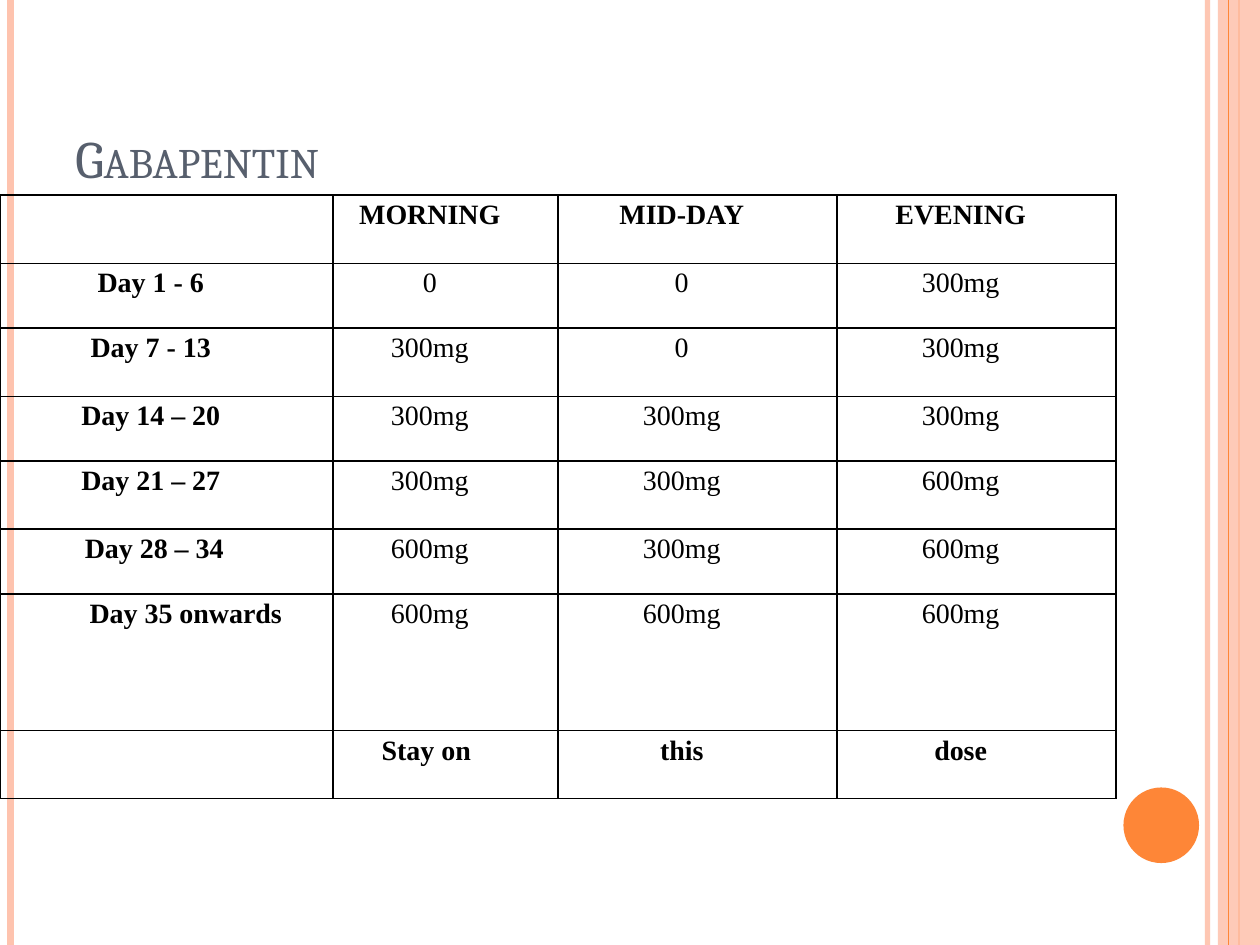
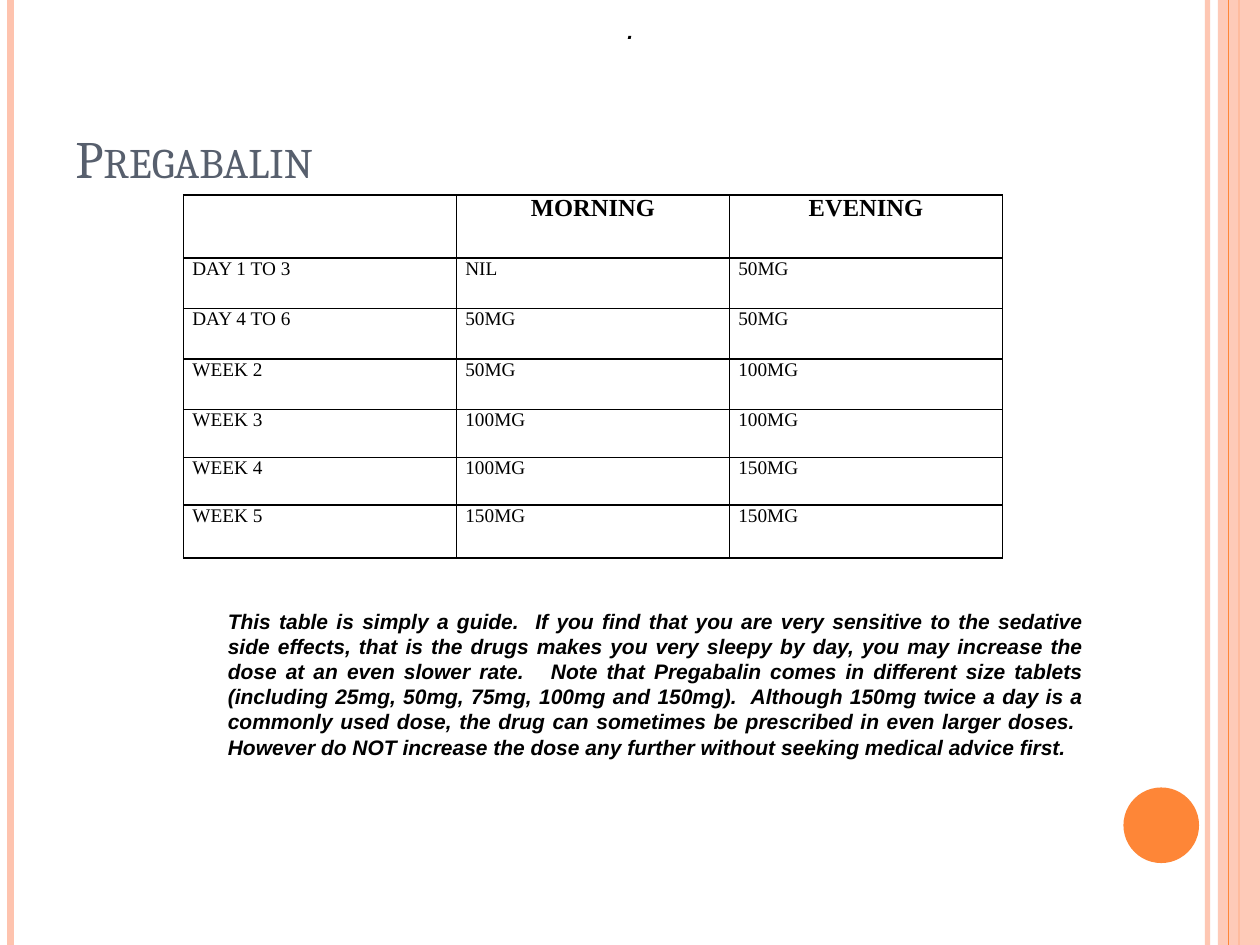
from dataclasses import dataclass

from lxml import etree
from pptx import Presentation
from pptx.dml.color import RGBColor
from pptx.enum import shapes, text
from pptx.oxml import ns
from pptx.util import Pt


@dataclass(frozen=True)
class Theme:
    ink: str = "000000"
    title: str = "575F6D"
    accent: str = "FE8637"
    tint: str = "FEC3AE"
    title_font: str = "Cambria"
    table_font: str = "Times New Roman"
    note_font: str = "Arial"
    title_size: float = 30
    dose_size: float = 16
    head_size: float = 14
    body_size: float = 11
    note_size: float = 12


WIDTH, HEIGHT = 720, 540
TABLE_TOP = 111.5
CENTER, JUSTIFY, LEFT = text.PP_ALIGN.CENTER, text.PP_ALIGN.JUSTIFY, text.PP_ALIGN.LEFT

GABAPENTIN = [
    ["", "MORNING", "MID-DAY", "EVENING"],
    ["Day 1 - 6", "0", "0", "300mg"],
    ["Day 7 - 13", "300mg", "0", "300mg"],
    ["Day 14 – 20", "300mg", "300mg", "300mg"],
    ["Day 21 – 27", "300mg", "300mg", "600mg"],
    [" Day 28 – 34", "600mg", "300mg", "600mg"],
    ["Day 35 onwards", "600mg", "600mg", "600mg"],
    ["", "Stay on ", "this", "dose"],
]
PREGABALIN = [
    ["", "MORNING", "EVENING"],
    ["DAY 1 TO 3", "NIL", "50MG"],
    ["DAY 4 TO 6", "50MG", "50MG"],
    ["WEEK 2", "50MG", "100MG"],
    ["WEEK 3", "100MG", "100MG"],
    ["WEEK 4", "100MG", "150MG"],
    ["WEEK 5", "150MG", "150MG"],
]
NOTE = (
    "This table is simply a guide.  If you find that you are very sensitive to the "
    "sedative side effects, that is the drugs makes you very sleepy by day, you may "
    "increase the dose at an even slower rate.   Note that Pregabalin comes in "
    "different size tablets (including 25mg, 50mg, 75mg, 100mg and 150mg).  Although "
    "150mg twice a day is a commonly used dose, the drug can sometimes be prescribed "
    "in even larger doses.  However do NOT increase the dose any further without "
    "seeking medical advice first."
)


class Deck:
    def __init__(self, theme):
        self.theme = theme
        self.prs = Presentation()
        self.prs.slide_width, self.prs.slide_height = Pt(WIDTH), Pt(HEIGHT)
        self.slide = None

    def add_slide(self, title):
        t = self.theme
        self.slide = self.prs.slides.add_slide(self.prs.slide_layouts[6])
        self.rule(690, t.tint, 3, 93)
        self.rule(6, t.tint, 4.5)
        self.rule(708, t.accent, 1.5)
        self.shape(shapes.MSO_SHAPE.RECTANGLE, 696, 0, 24, HEIGHT, t.tint, 87)
        self.rule(702, t.accent, 0.75)
        self.shape(shapes.MSO_SHAPE.OVAL, 642, 450, 43.2, 43.2, t.accent)
        p = self.text(title, 36, 21.6, 588, 90, text.MSO_ANCHOR.BOTTOM)
        self.font(p, t.title_font, t.title_size, t.title)
        p.runs[0]._r.get_or_add_rPr().set("cap", "small")

    def font(self, p, name, size, color, bold=False, italic=False):
        f = p.font
        f.name, f.size, f.bold, f.italic = name, Pt(size), bold, italic
        f.color.rgb = RGBColor.from_string(color)

    def opacity(self, sp, percent):
        clr = sp._element.spPr.find(".//" + ns.qn("a:srgbClr"))
        etree.SubElement(clr, ns.qn("a:alpha")).set("val", str(percent * 1000))

    def rule(self, x, color, width, opacity=100):
        sp = self.slide.shapes.add_connector(
            shapes.MSO_CONNECTOR.STRAIGHT, Pt(x), 0, Pt(x), Pt(HEIGHT))
        sp.line.color.rgb = RGBColor.from_string(color)
        sp.line.width = Pt(width)
        etree.SubElement(sp._element.spPr, ns.qn("a:effectLst"))
        if opacity < 100:
            self.opacity(sp, opacity)

    def shape(self, kind, x, y, w, h, color, opacity=100):
        sp = self.slide.shapes.add_shape(kind, Pt(x), Pt(y), Pt(w), Pt(h))
        sp.shadow.inherit = False
        sp.fill.solid()
        sp.fill.fore_color.rgb = RGBColor.from_string(color)
        sp.line.fill.background()
        if opacity < 100:
            self.opacity(sp, opacity)

    def text(self, content, x, y, w, h, anchor=text.MSO_ANCHOR.TOP, wrap=True):
        tf = self.slide.shapes.add_textbox(Pt(x), Pt(y), Pt(w), Pt(h)).text_frame
        tf.word_wrap = wrap
        tf.vertical_anchor = anchor
        p = tf.paragraphs[0]
        p.text = content
        return p

    def note(self, content, *box, **options):
        t = self.theme
        p = self.text(content, *box, **options)
        p.alignment = JUSTIFY
        self.font(p, t.note_font, t.note_size, t.ink, True, True)

    def borders(self, cell):
        tcPr = cell._tc.get_or_add_tcPr()
        for i, side in enumerate(("lnL", "lnR", "lnT", "lnB")):
            ln = etree.Element(ns.qn("a:" + side), w=str(Pt(1)))
            fill = etree.SubElement(ln, ns.qn("a:solidFill"))
            etree.SubElement(fill, ns.qn("a:srgbClr"), val=self.theme.ink)
            tcPr.insert(i, ln)

    def table(self, rows, x, widths, heights, style, right=5):
        frame = self.slide.shapes.add_table(
            len(rows), len(widths), Pt(x), Pt(TABLE_TOP), Pt(sum(widths)), Pt(sum(heights)))
        table = frame.table
        table.first_row = table.horz_banding = False
        for column, width in zip(table.columns, widths):
            column.width = Pt(width)
        for i, (row, height) in enumerate(zip(rows, heights)):
            table.rows[i].height = Pt(height)
            for j, value in enumerate(row):
                cell = table.cell(i, j)
                cell.fill.background()
                self.borders(cell)
                cell.margin_left, cell.margin_right = Pt(5), Pt(right)
                cell.margin_top = cell.margin_bottom = 0
                p = cell.text_frame.paragraphs[0]
                p.text = value
                size, bold, p.alignment, p.line_spacing = style(i, j)
                self.font(p, self.theme.table_font, size, self.theme.ink, bold)
        return table


def main():
    theme = Theme()
    deck = Deck(theme)

    def gabapentin_style(i, j):
        bold = j == 0 or i in (0, len(GABAPENTIN) - 1)
        return theme.dose_size, bold, CENTER, 1.15

    def pregabalin_style(i, j):
        if i == 0:
            return theme.head_size, True, CENTER, 1.0
        return theme.body_size, False, LEFT, 1.0

    deck.add_slide("Gabapentin")
    table = deck.table(GABAPENTIN, 0, [190.3, 128.6, 159.4, 159.4],
                       [39, 37] * 3 + [78, 39], gabapentin_style, right=23)
    table.cell(6, 0).margin_left = Pt(45)

    deck.add_slide("Pregabalin")
    deck.table(PREGABALIN, 104.9, [156] * 3,
               [36] + [28.9] * 3 + [27.2] * 2 + [30.4], pregabalin_style)
    deck.note(".", 351.4, 7.2, 18, 21.6, anchor=text.MSO_ANCHOR.MIDDLE, wrap=False)
    deck.note(NOTE, 123.1, 344, 503.3, 94.5)

    deck.prs.save("out.pptx")


if __name__ == "__main__":
    main()
